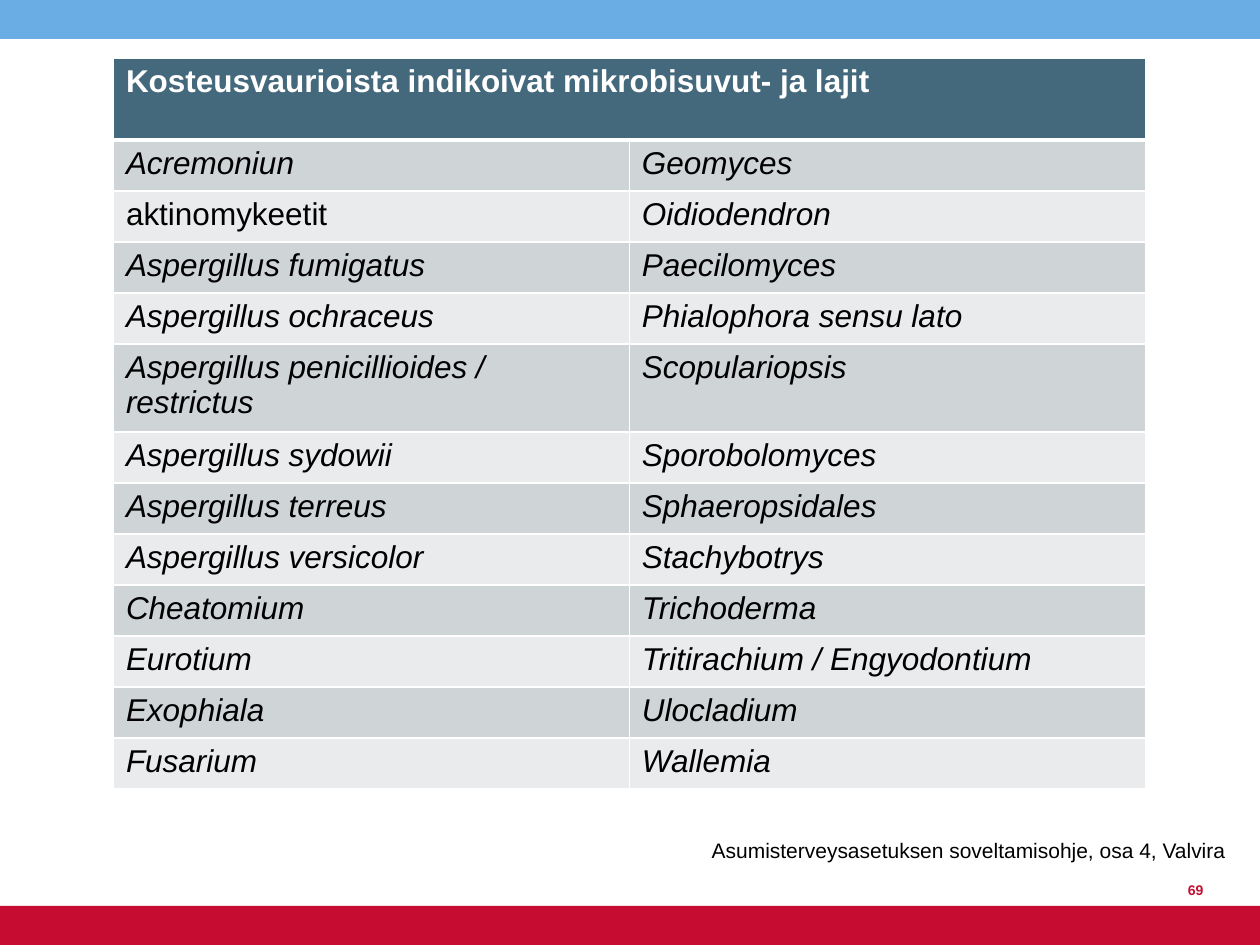
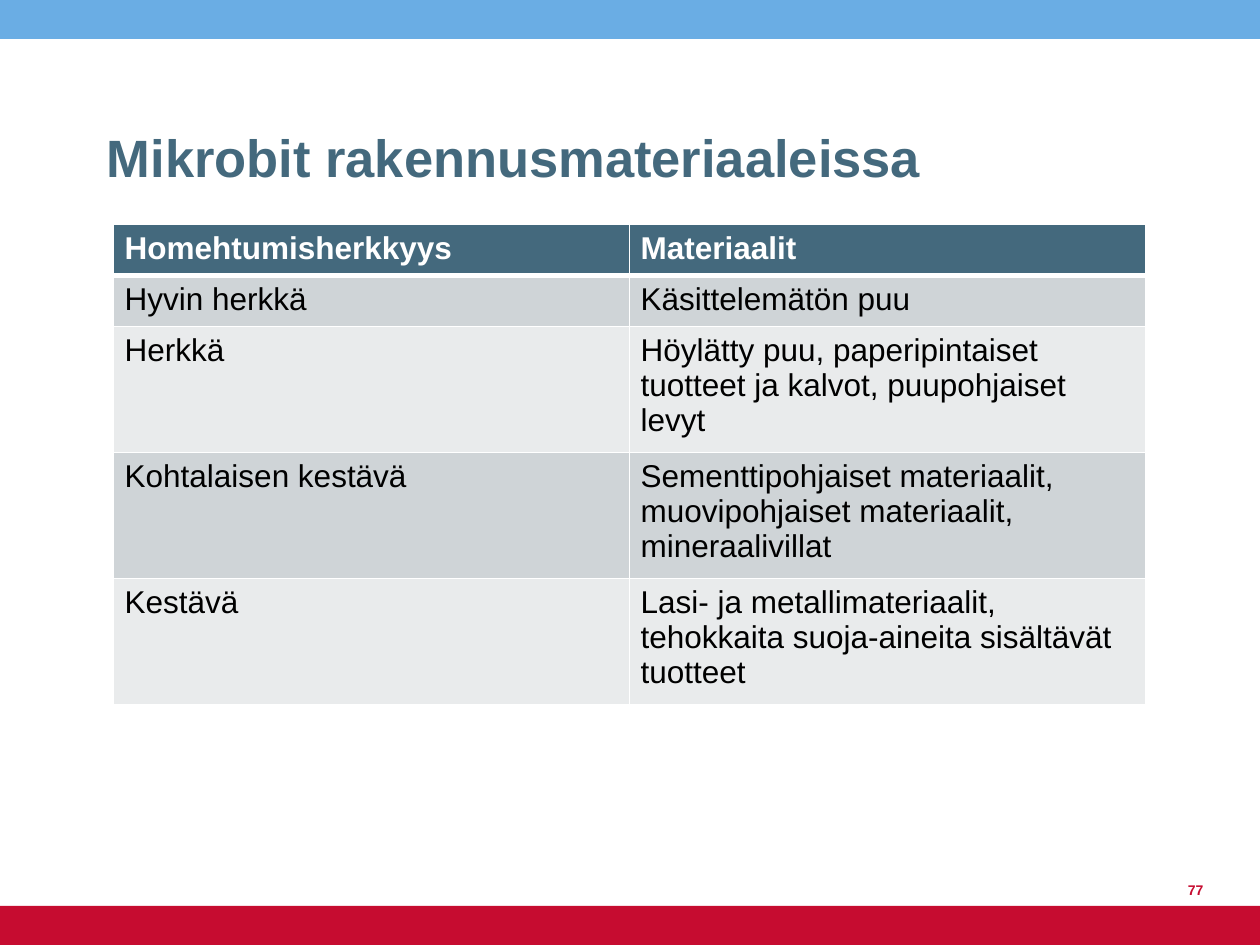
from dataclasses import dataclass
from lxml.etree import SubElement
from pptx import Presentation
from pptx.dml.color import RGBColor
from pptx.enum.shapes import MSO_SHAPE
from pptx.enum.text import MSO_ANCHOR, PP_ALIGN
from pptx.oxml.ns import qn
from pptx.util import Inches, Pt

MICROBES_HEADER = ["Kosteusvaurioista indikoivat mikrobisuvut- ja lajit"]
MICROBES = [
    ("Acremoniun", "Geomyces"),
    ("aktinomykeetit", "Oidiodendron"),
    ("Aspergillus fumigatus", "Paecilomyces"),
    ("Aspergillus ochraceus", "Phialophora sensu lato"),
    ("Aspergillus penicillioides / restrictus", "Scopulariopsis"),
    ("Aspergillus sydowii", "Sporobolomyces"),
    ("Aspergillus terreus", "Sphaeropsidales"),
    ("Aspergillus versicolor", "Stachybotrys"),
    ("Cheatomium", "Trichoderma"),
    ("Eurotium", "Tritirachium / Engyodontium"),
    ("Exophiala", "Ulocladium"),
    ("Fusarium", "Wallemia"),
]
NOT_LATIN = {"aktinomykeetit"}
SOURCE = "Asumisterveysasetuksen soveltamisohje, osa 4, Valvira"

MATERIALS_TITLE = "Mikrobit rakennusmateriaaleissa"
MATERIALS_HEADER = ["Homehtumisherkkyys", "Materiaalit"]
MATERIALS = [
    ("Hyvin herkkä", "Käsittelemätön puu"),
    ("Herkkä", "Höylätty puu, paperipintaiset tuotteet ja kalvot, puupohjaiset levyt"),
    ("Kohtalaisen kestävä",
     "Sementtipohjaiset materiaalit, muovipohjaiset materiaalit, mineraalivillat"),
    ("Kestävä", "Lasi- ja metallimateriaalit, tehokkaita suoja-aineita sisältävät tuotteet"),
]


@dataclass(frozen=True)
class Theme:
    font: str = "Arial"
    sky: str = "6AADE4"
    red: str = "C60C30"
    slate: str = "44697D"
    stripes: tuple = ("CFD4D7", "E9EBEC")
    white: str = "FFFFFF"
    black: str = "000000"
    title: int = 30
    body: int = 18
    source: int = 12
    number: int = 8


T = Theme()
WIDTH, HEIGHT = 10, 7.5
BAND = 0.31
TABLE_LEFT, TABLE_WIDTH, COLS = 0.9, 8.19, 2
ROW = 0.405


def style(p, size, color, bold=False, italic=False):
    f = p.font
    f.name, f.size, f.bold, f.italic = T.font, Pt(size), bold, italic
    f.color.rgb = RGBColor.from_string(color)


def add_text(s, box, text, size, color, bold=False, align=PP_ALIGN.LEFT,
             anchor=MSO_ANCHOR.BOTTOM, wrap=True):
    tf = s.shapes.add_textbox(*map(Inches, box)).text_frame
    tf.word_wrap = wrap
    tf.vertical_anchor = anchor
    tf.text = text
    p = tf.paragraphs[0]
    p.alignment = align
    style(p, size, color, bold)


def add_band(s, top, color):
    sp = s.shapes.add_shape(MSO_SHAPE.RECTANGLE, 0, Inches(top), Inches(WIDTH), Inches(BAND))
    sp.shadow.inherit = False
    sp.fill.solid()
    sp.fill.fore_color.rgb = RGBColor.from_string(color)
    sp.line.fill.background()


def add_slide(prs, number):
    s = prs.slides.add_slide(prs.slide_layouts[6])
    add_band(s, 0, T.sky)
    add_band(s, HEIGHT - BAND, T.red)
    add_text(s, (9.1, 6.78, 0.55, 0.4), str(number), T.number, T.red, True, PP_ALIGN.RIGHT)
    return s


def set_borders(cell, top, bottom):
    """Draw white cell edges; the side edges are always 1 pt."""
    tcPr = cell._tc.get_or_add_tcPr()
    edges = zip(("a:lnL", "a:lnR", "a:lnT", "a:lnB"), (1, 1, top, bottom))
    for i, (tag, width) in enumerate(edges):
        ln = SubElement(tcPr, qn(tag), w=str(Pt(width)))
        fill = SubElement(ln, qn("a:solidFill"))
        SubElement(fill, qn("a:srgbClr"), val=T.white)
        tcPr.insert(i, ln)


def add_striped_table(s, top, header, rows, header_height=ROW, side_inset=0.1, latin=False):
    """Table with a slate header; a single header label spans all columns."""
    height = header_height + ROW * len(rows)
    table = s.shapes.add_table(len(rows) + 1, COLS, Inches(TABLE_LEFT), Inches(top),
                               Inches(TABLE_WIDTH), Inches(height)).table
    for row in table.rows:
        row.height = Inches(ROW)
    table.rows[0].height = Inches(header_height)
    if len(header) == 1:
        table.cell(0, 0).merge(table.cell(0, COLS - 1))
        header = header + [""] * (COLS - 1)
    for i, labels in enumerate([header, *rows]):
        head = i == 0
        for j, label in enumerate(labels):
            cell = table.cell(i, j)
            cell.margin_left = cell.margin_right = Inches(side_inset)
            cell.fill.solid()
            color = T.slate if head else T.stripes[(i - 1) % 2]
            cell.fill.fore_color.rgb = RGBColor.from_string(color)
            set_borders(cell, top=3 if i == 1 else 1, bottom=3 if head else 1)
            cell.text = label
            style(cell.text_frame.paragraphs[0], T.body, T.white if head else T.black,
                  bold=head, italic=latin and not head and label not in NOT_LATIN)


def main():
    prs = Presentation()
    prs.slide_width, prs.slide_height = Inches(WIDTH), Inches(HEIGHT)

    s = add_slide(prs, 69)
    add_striped_table(s, 0.46, MICROBES_HEADER, MICROBES, header_height=0.65, latin=True)
    add_text(s, (5.55, 6.6, 4.31, 0.3), SOURCE, T.source, T.black,
             anchor=MSO_ANCHOR.TOP, wrap=False)

    s = add_slide(prs, 77)
    add_text(s, (0.75, 0.36, TABLE_WIDTH, 1.18), MATERIALS_TITLE, T.title, T.slate, True)
    add_striped_table(s, 1.78, MATERIALS_HEADER, MATERIALS, side_inset=0.09)

    prs.save("out.pptx")


if __name__ == "__main__":
    main()
